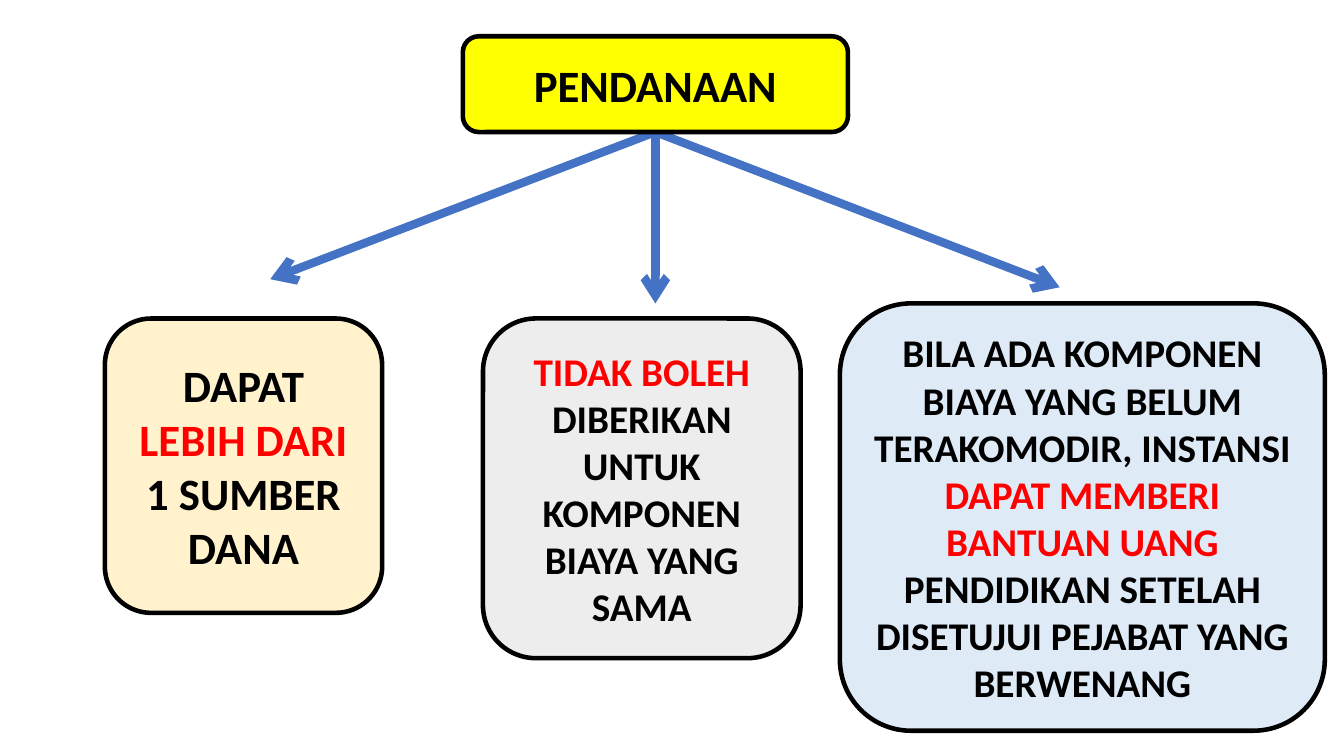
from lxml.etree import SubElement
from pptx import Presentation
from pptx.dml.color import RGBColor
from pptx.enum.shapes import MSO_CONNECTOR, MSO_SHAPE
from pptx.enum.text import MSO_ANCHOR, PP_ALIGN
from pptx.oxml.ns import qn
from pptx.util import Inches, Pt

BLACK, RED, BLUE, YELLOW = "000000", "FF0000", "4472C4", "FFFF00"
FONT = "Calibri"
HEADER_BOX = (4.59, 0.36, 3.82, 0.95)

# Each branch: box, fill, text size, arrow tip, coloured text parts
BRANCHES = [
    ((1.04, 3.16, 2.75, 2.92), "FFF2CC", 32, (2.68, 2.77),
     [("DAPAT ", BLACK), ("LEBIH DARI ", RED), ("1 SUMBER DANA", BLACK)]),
    ((8.33, 3.01, 4.81, 4.24), "DEEBF7", 28, (10.51, 2.85),
     [("BILA ADA KOMPONEN BIAYA YANG BELUM TERAKOMODIR, INSTANSI ", BLACK),
      ("DAPAT MEMBERI BANTUAN UANG ", RED),
      ("PENDIDIKAN SETELAH DISETUJUI PEJABAT YANG BERWENANG", BLACK)]),
    ((4.79, 3.16, 3.15, 3.37), "EDEDED", 28, (6.5, 3.01),
     [("TIDAK BOLEH ", RED),
      ("DIBERIKAN UNTUK KOMPONEN BIAYA YANG SAMA", BLACK)]),
]


def paint(color_format, color):
    color_format.rgb = RGBColor.from_string(color)


def write_text(shape, parts, size):
    """Fill a shape with one centred bold paragraph of coloured parts."""
    frame = shape.text_frame
    frame.word_wrap = True
    frame.vertical_anchor = MSO_ANCHOR.MIDDLE
    para = frame.paragraphs[0]
    para.alignment = PP_ALIGN.CENTER
    for wording, color in parts:
        span = para.add_run()
        span.text = wording
        span.font.name, span.font.size, span.font.bold = FONT, Pt(size), True
        paint(span.font.color, color)


def add_card(page, box, fill):
    card = page.shapes.add_shape(MSO_SHAPE.ROUNDED_RECTANGLE, *map(Inches, box))
    card.shadow.inherit = False
    card.fill.solid()
    paint(card.fill.fore_color, fill)
    paint(card.line.color, BLACK)
    card.line.width = Pt(3.25)
    return card


def add_header(page, box):
    """Yellow card with the slide title laid over it."""
    card = add_card(page, box, YELLOW)
    title = page.shapes.title
    title.left, title.top, title.width, title.height = map(Inches, box)
    write_text(title, [("PENDANAAN", BLACK)], 32)
    return card


def add_arrow(page, header, tip):
    arrow = page.shapes.add_connector(
        MSO_CONNECTOR.STRAIGHT, 0, 0, *map(Inches, tip))
    arrow.begin_connect(header, 2)
    paint(arrow.line.color, BLUE)
    arrow.line.width = Pt(6)
    SubElement(arrow.line._get_or_add_ln(), qn("a:tailEnd"), type="arrow")
    SubElement(arrow.element.spPr, qn("a:effectLst"))


def bring_to_front(shape):
    shape.element.getparent().append(shape.element)


def build_diagram(page):
    header = add_header(page, HEADER_BOX)
    for box, fill, size, tip, parts in BRANCHES:
        add_arrow(page, header, tip)
        write_text(add_card(page, box, fill), parts, size)
    # The header covers the arrow starts
    bring_to_front(header)
    bring_to_front(page.shapes.title)


def main():
    deck = Presentation()
    deck.slide_width, deck.slide_height = Inches(13.33), Inches(7.5)
    page = deck.slides.add_slide(deck.slide_layouts[5])
    build_diagram(page)
    deck.save("out.pptx")


if __name__ == "__main__":
    main()
